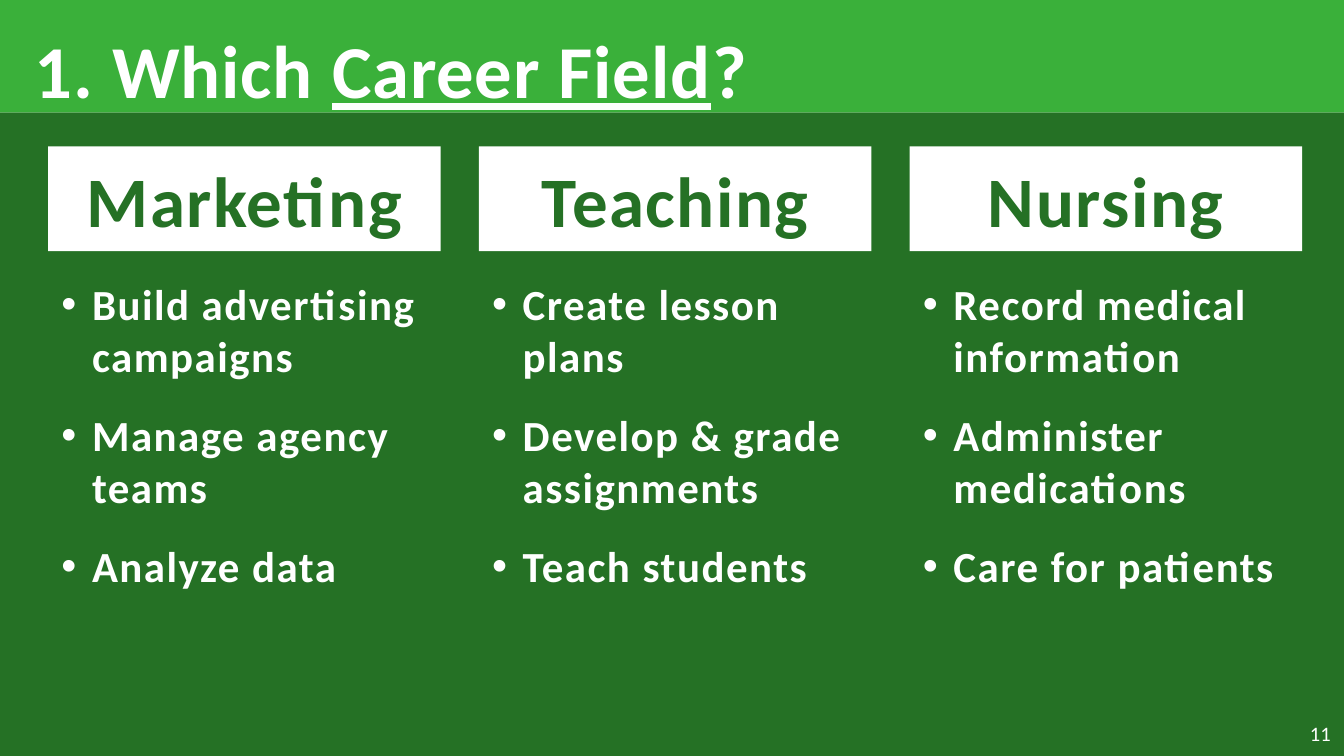
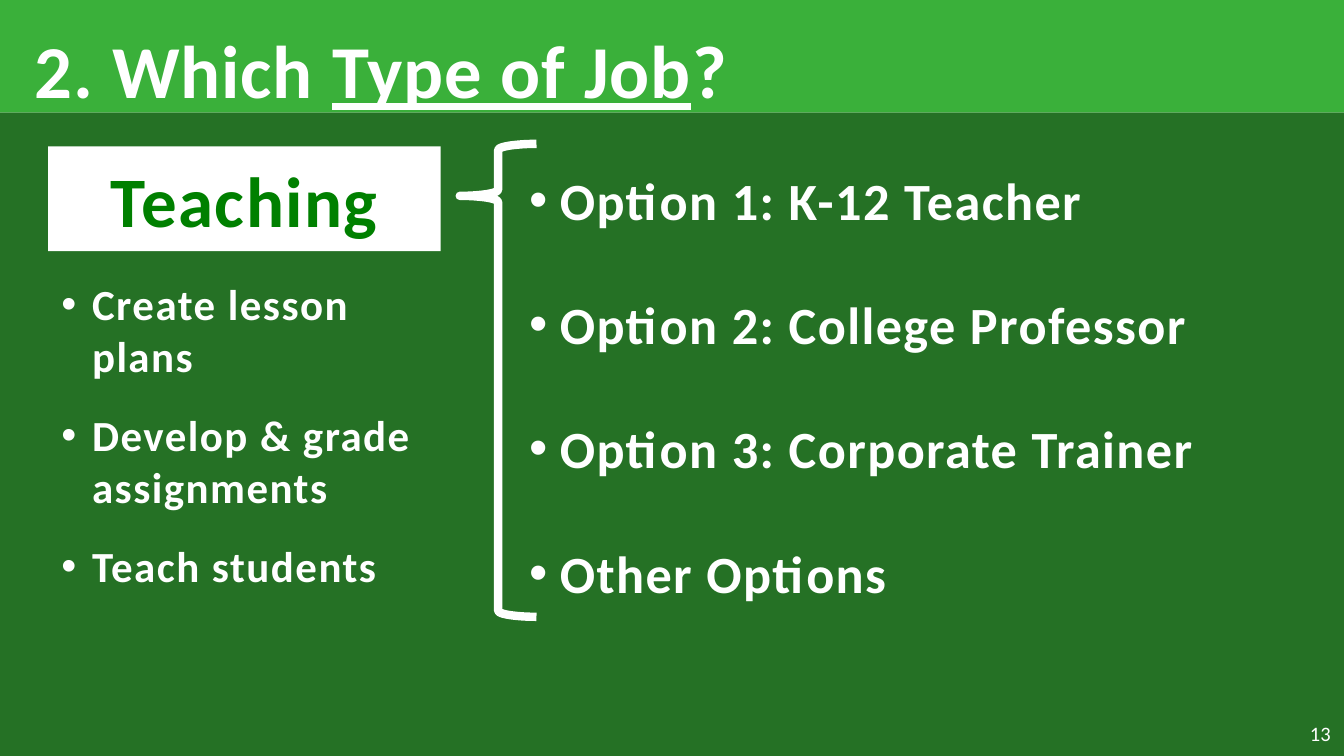
import pptx
import pptx.dml.color
import pptx.enum.shapes
import pptx.enum.text
import pptx.oxml
import pptx.oxml.ns
import pptx.util

Cm = pptx.util.Cm
Pt = pptx.util.Pt
SHAPE = pptx.enum.shapes.MSO_SHAPE
ALIGN = pptx.enum.text.PP_ALIGN
ANCHOR = pptx.enum.text.MSO_ANCHOR

COLORS = {
    "band": "3AB03A",
    "body": "257125",
    "white": "FFFFFF",
    "highlight": "008000",
}
FONT = "Calibri"
SLIDE_WIDTH, SLIDE_HEIGHT = 25.4, 14.29
BAND_HEIGHT = 2.13
COLUMN_LEFT, COLUMN_STEP, COLUMN_WIDTH = 0.91, 8.14, 7.42
FIELD_TOP, FIELD_HEIGHT = 2.77, 1.98
DUTIES_TOP, DUTIES_HEIGHT = 5.13, 6.88
BULLET_INDENT = 0.58

TEACHING_DUTIES = ["Create lesson plans", "Develop & grade assignments", "Teach students"]
CAREER_FIELDS = {
    "Marketing": ["Build advertising campaigns", "Manage agency teams", "Analyze data"],
    "Teaching": TEACHING_DUTIES,
    "Nursing": ["Record medical information", "Administer medications", "Care for patients"],
}
JOB_OPTIONS = [
    "Option 1: K-12 Teacher",
    "Option 2: College Professor",
    "Option 3: Corporate Trainer",
    "Other Options",
]


def rgb(color):
    """Return the named colour."""
    return pptx.dml.color.RGBColor.from_string(COLORS[color])


def add_run(paragraph, text, size, color="white", bold=True, underline=False, spacing=0.8):
    """Add one styled run, with letter spacing in points."""
    run = paragraph.add_run()
    run.text = text
    font = run.font
    font.name, font.size, font.bold = FONT, Pt(size), bold
    font.color.rgb = rgb(color)
    if underline:
        font.underline = True
    if spacing:
        run._r.get_or_add_rPr().set("spc", str(round(spacing * 100)))


def add_text_box(slide, left, top, width, height):
    """Add a wrapping text box and return its text frame."""
    frame = slide.shapes.add_textbox(Cm(left), Cm(top), Cm(width), Cm(height)).text_frame
    frame.word_wrap = True
    return frame


def add_plain_shape(slide, kind, left, top, width, height, fill=None):
    """Add a shape without shadow or outline."""
    shape = slide.shapes.add_shape(kind, Cm(left), Cm(top), Cm(width), Cm(height))
    shape.shadow.inherit = False
    shape.line.fill.background()
    if fill:
        shape.fill.solid()
        shape.fill.fore_color.rgb = rgb(fill)
    else:
        shape.fill.background()
    return shape


def make_bullet(paragraph):
    """Give the paragraph a hanging round bullet."""
    properties = paragraph._p.get_or_add_pPr()
    properties.set("marL", str(Cm(BULLET_INDENT)))
    properties.set("indent", str(-Cm(BULLET_INDENT)))
    namespace = pptx.oxml.ns.nsdecls("a")
    for tag in ('buFont {} typeface="Arial"', 'buChar {} char="•"'):
        properties.append(pptx.oxml.parse_xml(f"<a:{tag.format(namespace)}/>"))


def add_bullets(slide, items, left, top, width, size, gap):
    """Add a bulleted list with an equal gap between the items."""
    frame = add_text_box(slide, left, top, width, DUTIES_HEIGHT)
    for index, item in enumerate(items):
        paragraph = frame.add_paragraph() if index else frame.paragraphs[0]
        if index:
            paragraph.space_before = Pt(gap)
        make_bullet(paragraph)
        add_run(paragraph, item, size)


def add_career_column(slide, index, field, duties, color="body"):
    """Add a career field heading with its duties below."""
    left = COLUMN_LEFT + index * COLUMN_STEP
    heading = add_plain_shape(
        slide, SHAPE.RECTANGLE, left, FIELD_TOP, COLUMN_WIDTH, FIELD_HEIGHT, "white"
    )
    heading.text_frame.vertical_anchor = ANCHOR.MIDDLE
    paragraph = heading.text_frame.paragraphs[0]
    paragraph.alignment = ALIGN.CENTER
    add_run(paragraph, field, 38, color)
    add_bullets(slide, duties, left, DUTIES_TOP, COLUMN_WIDTH, 23, 15)


def add_brace(slide, left, top, width, height):
    """Add the brace that opens from a career field to its job options."""
    brace = add_plain_shape(slide, SHAPE.LEFT_BRACE, left, top, width, height)
    brace.adjustments[0], brace.adjustments[1] = 0.08, 0.11
    brace.line.color.rgb = rgb("white")
    brace.line.width = Pt(4.5)


def add_question_slide(deck, number, question, page):
    """Add a slide with bands, question title and page number."""
    slide = deck.slides.add_slide(deck.slide_layouts[6])
    add_plain_shape(slide, SHAPE.RECTANGLE, 0, 0, SLIDE_WIDTH, BAND_HEIGHT, "band")
    add_plain_shape(
        slide, SHAPE.RECTANGLE, 0, BAND_HEIGHT, SLIDE_WIDTH, SLIDE_HEIGHT - BAND_HEIGHT, "body"
    )
    title = add_text_box(slide, 0.41, 0.28, 24.99, 1.7)
    title.margin_top = Cm(0.18)
    for text, underline in ((f"{number}. Which ", False), (question, True), ("?", False)):
        add_run(title.paragraphs[0], text, 40, underline=underline, spacing=0.5)
    footer = add_text_box(slide, 22.66, 13.49, 2.74, 0.76)
    footer.vertical_anchor = ANCHOR.MIDDLE
    footer.paragraphs[0].alignment = ALIGN.RIGHT
    add_run(footer.paragraphs[0], str(page), 11, bold=False, spacing=0)
    return slide


def main():
    """Build the career field and job type slides."""
    deck = pptx.Presentation()
    deck.slide_width, deck.slide_height = Cm(SLIDE_WIDTH), Cm(SLIDE_HEIGHT)

    career_slide = add_question_slide(deck, 1, "Career Field", 11)
    for index, (field, duties) in enumerate(CAREER_FIELDS.items()):
        add_career_column(career_slide, index, field, duties)

    job_slide = add_question_slide(deck, 2, "Type of Job", 13)
    add_career_column(job_slide, 0, "Teaching", TEACHING_DUTIES, "highlight")
    add_bullets(job_slide, JOB_OPTIONS, 9.75, 3.05, 13.49, 28, 33)
    add_brace(job_slide, 8.69, 2.72, 1.45, 8.94)

    deck.save("out.pptx")


if __name__ == "__main__":
    main()
